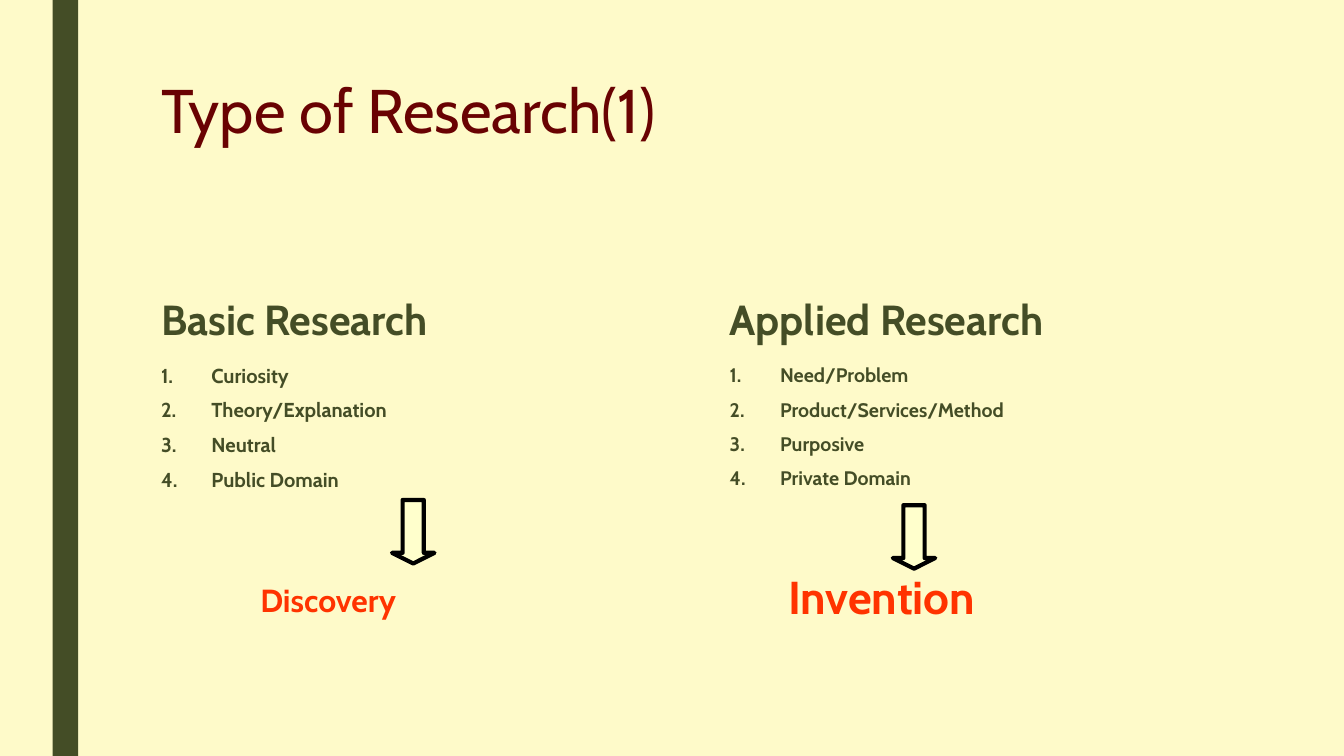
from lxml import etree
from pptx import Presentation
from pptx.dml.color import RGBColor
from pptx.enum.shapes import MSO_SHAPE
from pptx.enum.text import MSO_ANCHOR, MSO_AUTO_SIZE, PP_ALIGN
from pptx.oxml.ns import qn
from pptx.util import Cm, Pt

RECT, ARROW = MSO_SHAPE.RECTANGLE, MSO_SHAPE.DOWN_ARROW
TOP, BOTTOM = MSO_ANCHOR.TOP, MSO_ANCHOR.BOTTOM
FIXED, LEFT = MSO_AUTO_SIZE.NONE, PP_ALIGN.LEFT
CREAM = RGBColor(0xFE, 0xFA, 0xC9)
OLIVE = RGBColor(0x44, 0x4D, 0x26)
MAROON = RGBColor(0x69, 0x02, 0x02)
RED = RGBColor(0xFF, 0x33, 0x00)
PALE = RGBColor(0xFF, 0xFF, 0xCC)
BLACK = RGBColor(0, 0, 0)
FONT = "Cabin"


def write(para, text, size, color=OLIVE, bold=True, lines=0.74,
          before=0, after=0, left=0, hang=0):
    """Fill a paragraph with formatted text, numbered when it hangs."""
    props = para._p.get_or_add_pPr()
    props.set("marL", str(Cm(left)))
    props.set("indent", str(-Cm(hang)))
    para.alignment = LEFT
    para.line_spacing = lines
    para.space_before, para.space_after = Pt(before), Pt(after)
    if hang:
        etree.SubElement(props, qn("a:buFont"), typeface="+mj-lt")
        etree.SubElement(props, qn("a:buAutoNum"), type="arabicPeriod")
    run = para.add_run()
    run.text = text
    font = run.font
    font.name, font.size, font.bold = FONT, Pt(size), bold
    font.color.rgb = color


class Deck:
    """Hold the current slide and add its kinds of element."""

    def __init__(self):
        """Start a wide deck with one title-only slide."""
        self.prs = Presentation()
        self.prs.slide_width, self.prs.slide_height = Cm(33.87), Cm(19.05)
        self.slide = self.prs.slides.add_slide(self.prs.slide_layouts[5])
        fill = self.slide.background.fill
        fill.solid()
        fill.fore_color.rgb = CREAM

    def frame(self, shape, anchor):
        """Set the text frame of a shape and return it."""
        frame = shape.text_frame
        frame.word_wrap, frame.auto_size = True, FIXED
        frame.vertical_anchor = anchor
        return frame

    def title(self, text):
        """Place and write the title."""
        shape = self.slide.shapes.title
        shape.left, shape.top = Cm(3.81), Cm(1.9)
        shape.width, shape.height = Cm(26.67), Cm(4.11)
        write(self.frame(shape, TOP).paragraphs[0], text, 44,
              color=MAROON, bold=False, lines=0.89)

    def box(self, x, y, height, anchor=TOP):
        """Add a column-wide text box and return its frame."""
        shape = self.slide.shapes.add_textbox(
            Cm(x), Cm(y), Cm(12.34), Cm(height))
        return self.frame(shape, anchor)

    def shape(self, kind, x, y, width, height, color):
        """Add a filled shape without outline."""
        shape = self.slide.shapes.add_shape(
            kind, Cm(x), Cm(y), Cm(width), Cm(height))
        shape.shadow.inherit = False
        shape.fill.solid()
        shape.fill.fore_color.rgb = color
        shape.line.fill.background()
        return shape

    def arrow(self, x, y):
        """Add an outlined arrow pointing down."""
        arrow = self.shape(ARROW, x, y, 1.07, 1.6, PALE)
        arrow.adjustments[0], arrow.adjustments[1] = 0.5, 0.25
        arrow.line.color.rgb, arrow.line.width = BLACK, Pt(3)

    def column(self, x, head, items, size, result):
        """Add a heading, its numbered list and the result below."""
        write(self.box(x, 6.5, 2.29, BOTTOM).paragraphs[0], head, 30,
              lines=0.84)
        frame = self.box(x, 9.17, 7.11)
        for i, item in enumerate(items):
            para = frame.add_paragraph() if i else frame.paragraphs[0]
            write(para, item, size, before=10 if i else 0, after=2,
                  left=1.27, hang=1.27)
        text, big, gap, left = result
        write(frame.add_paragraph(), text, big, color=RED,
              before=gap, left=left)


def main():
    """Build and save the slide."""
    deck = Deck()
    deck.shape(RECT, 1.33, 0, 0.64, 19.05, OLIVE)
    deck.title("Type of Research(1)")
    deck.column(3.81, "Basic Research",
                ["Curiosity", "Theory/Explanation", "Neutral",
                 "Public Domain"],
                14.4, ("Discovery", 22.8, 69, 2.5))
    deck.column(18.14, "Applied Research",
                ["Need/Problem", "Product/Services/Method", "Purposive",
                 "Private Domain"],
                14, ("Invention", 32.9, 64.5, 1.48))
    deck.arrow(9.88, 12.6)
    deck.arrow(22.5, 12.73)
    deck.prs.save("out.pptx")


if __name__ == "__main__":
    main()
